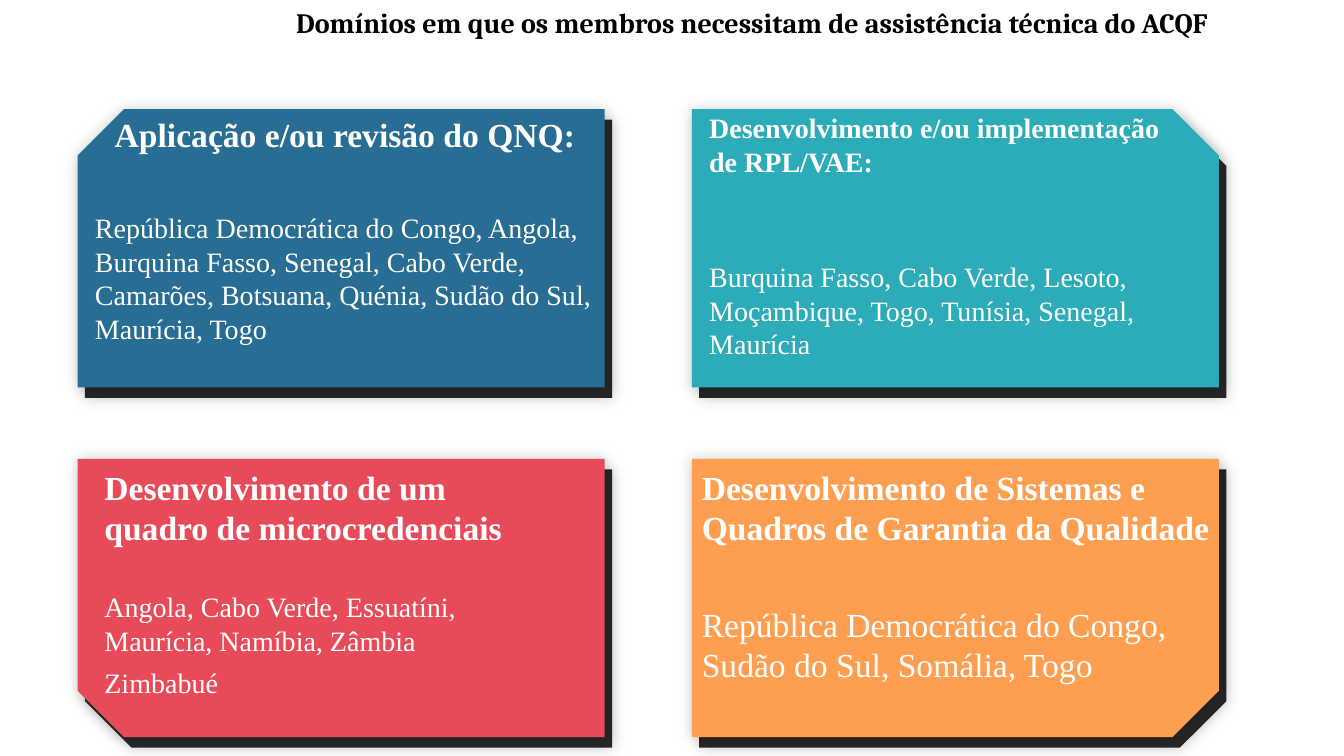
import pptx
import pptx.dml.color
import pptx.enum.shapes
import pptx.enum.text
import pptx.oxml
import pptx.oxml.ns
import pptx.util

PX = 9525
CARD_WIDTH, CARD_HEIGHT = 502, 265
CARD_LEFT, CARD_TOP = 74, 104
COLUMN_STEP, ROW_STEP = 585, 333
CARD_COLORS = ["286D94", "2CACB8", "E74B59", "FE9E50"]
SERIF = "Times New Roman"
WHITE = "FFFFFF"

DOMAINS = [
    ((81, 104, 495, 239), "Aplicação e/ou revisão do QNQ:", 24, True,
     ["República Democrática do Congo, Angola, Burquina Fasso, Senegal, "
      "Cabo Verde, Camarões, Botsuana, Quénia, Sudão do Sul, Maurícia, Togo"], 20, 40),
    ((666, 101, 479, 252), "Desenvolvimento e/ou implementação de RPL/VAE:", 20, False,
     ["Burquina Fasso, Cabo Verde, Lesoto, Moçambique, Togo, Tunísia, "
      "Senegal, Maurícia"], 20, 58),
    ((90, 440, 433, 242), "Desenvolvimento de um quadro de microcredenciais", 24, False,
     ["Angola, Cabo Verde, Essuatíni, Maurícia, Namíbia, Zâmbia", "Zimbabué"], 20, 30),
    ((659, 440, 502, 227),
     "Desenvolvimento de Sistemas e Quadros de Garantia da Qualidade", 24, False,
     ["República Democrática do Congo, Sudão do Sul, Somália, Togo"], 24, 40),
]


def color(value):
    return pptx.dml.color.RGBColor.from_string(value)


def scaled(*lengths):
    return [length * PX for length in lengths]


def add_glow_shadow(shape):
    namespace = pptx.oxml.ns.nsdecls("a")
    shape._element.spPr.append(pptx.oxml.parse_xml(
        f'<a:effectLst {namespace}><a:outerShdw blurRad="254000" dist="127000" dir="0" '
        'algn="ctr" rotWithShape="0"><a:srgbClr val="000000"><a:alpha val="0"/>'
        '</a:srgbClr></a:outerShdw></a:effectLst>'.replace('blurRad="254000"', 'blurRad="127000"')
        .replace('dist="127000"', 'dist="0"').replace('alpha val="0"', 'alpha val="20000"')))


def add_card(page, left, top, fill, flip_horizontal, flip_vertical):
    card = page.shapes.add_shape(
        pptx.enum.shapes.MSO_SHAPE.SNIP_1_RECTANGLE,
        *scaled(left, top, CARD_WIDTH, CARD_HEIGHT))
    card.fill.solid()
    card.fill.fore_color.rgb = color(fill)
    card.line.fill.background()
    frame = card._element.spPr.xfrm
    if flip_horizontal:
        frame.set("flipH", "1")
    if flip_vertical:
        frame.set("flipV", "1")
    add_glow_shadow(card)


def add_cards(page, fills, shift_x, shift_y):
    for index, fill in enumerate(fills):
        row, column = divmod(index, 2)
        add_card(page, CARD_LEFT + column * COLUMN_STEP + shift_x,
                 CARD_TOP + row * ROW_STEP + shift_y, fill, column == 0, row == 1)


def add_box(page, place):
    box = page.shapes.add_textbox(*scaled(*place))
    box.text_frame.word_wrap = True
    return box.text_frame


def write(para, text, size=20, font=SERIF, fill=WHITE, bold=False, centered=False, before=0):
    align = pptx.enum.text.PP_ALIGN
    para.alignment = align.CENTER if centered else align.LEFT
    para.space_before = pptx.util.Pt(before)
    span = para.add_run()
    span.text = text
    span.font.size = pptx.util.Pt(size)
    span.font.name = font
    span.font.bold = bold
    span.font.color.rgb = color(fill)


def add_domain(page, place, heading, heading_size, centered, countries, size, gap):
    frame = add_box(page, place)
    write(frame.paragraphs[0], heading, size=heading_size, bold=True, centered=centered)
    for index, names in enumerate(countries):
        write(frame.add_paragraph(), names, size=size, before=6 if index else gap)


def main():
    deck = pptx.Presentation()
    deck.slide_width, deck.slide_height = scaled(1280, 720)
    page = deck.slides.add_slide(deck.slide_layouts[6])
    title = add_box(page, (214, 1, 1005, 74))
    write(title.paragraphs[0], "Domínios em que os membros necessitam de assistência técnica do ACQF",
          font="Cambria", fill="000000", bold=True, centered=True)
    add_cards(page, ["262626"] * 4, 7, 10)
    add_cards(page, CARD_COLORS, 0, 0)
    for domain in DOMAINS:
        add_domain(page, *domain)
    deck.save("out.pptx")


if __name__ == "__main__":
    main()
